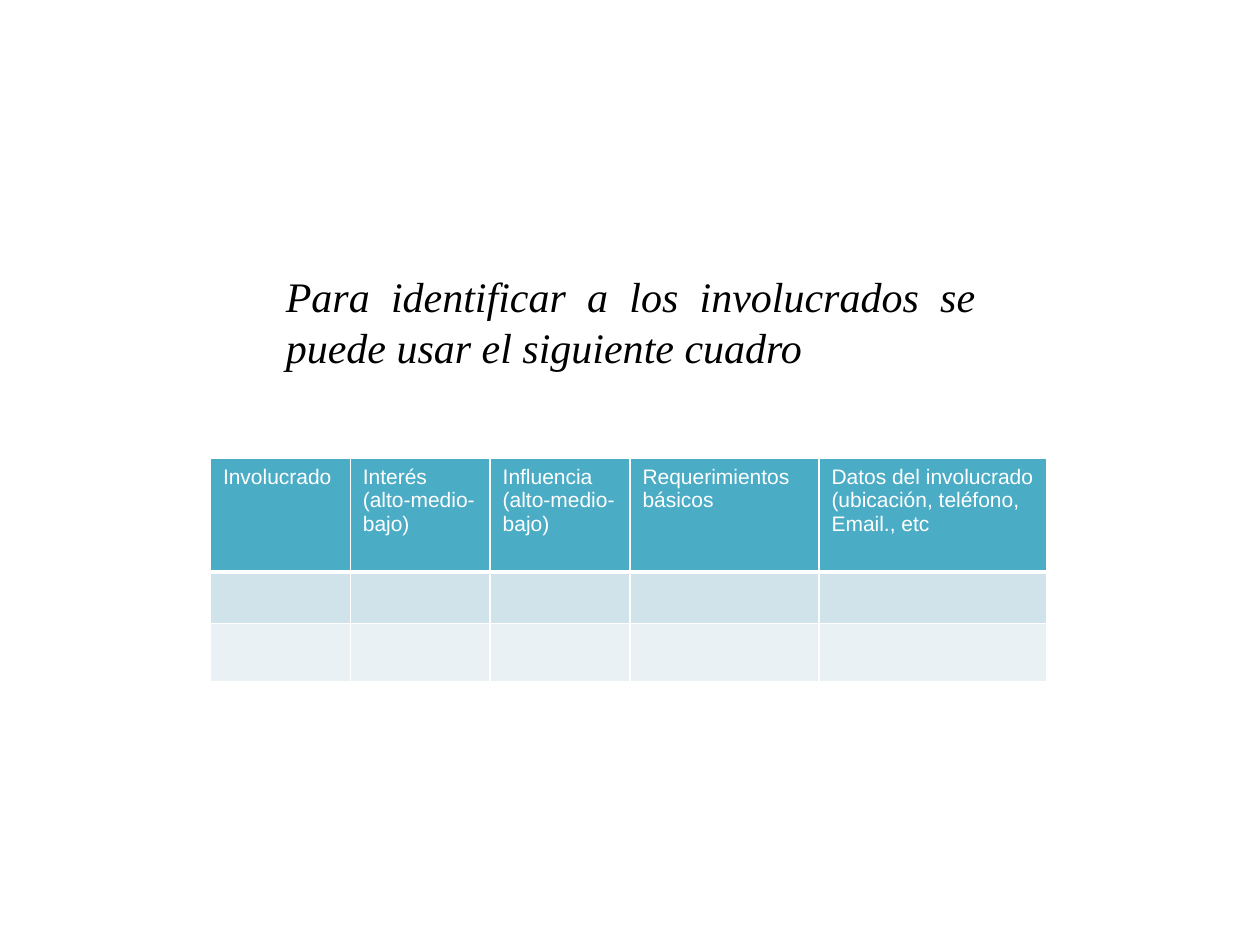
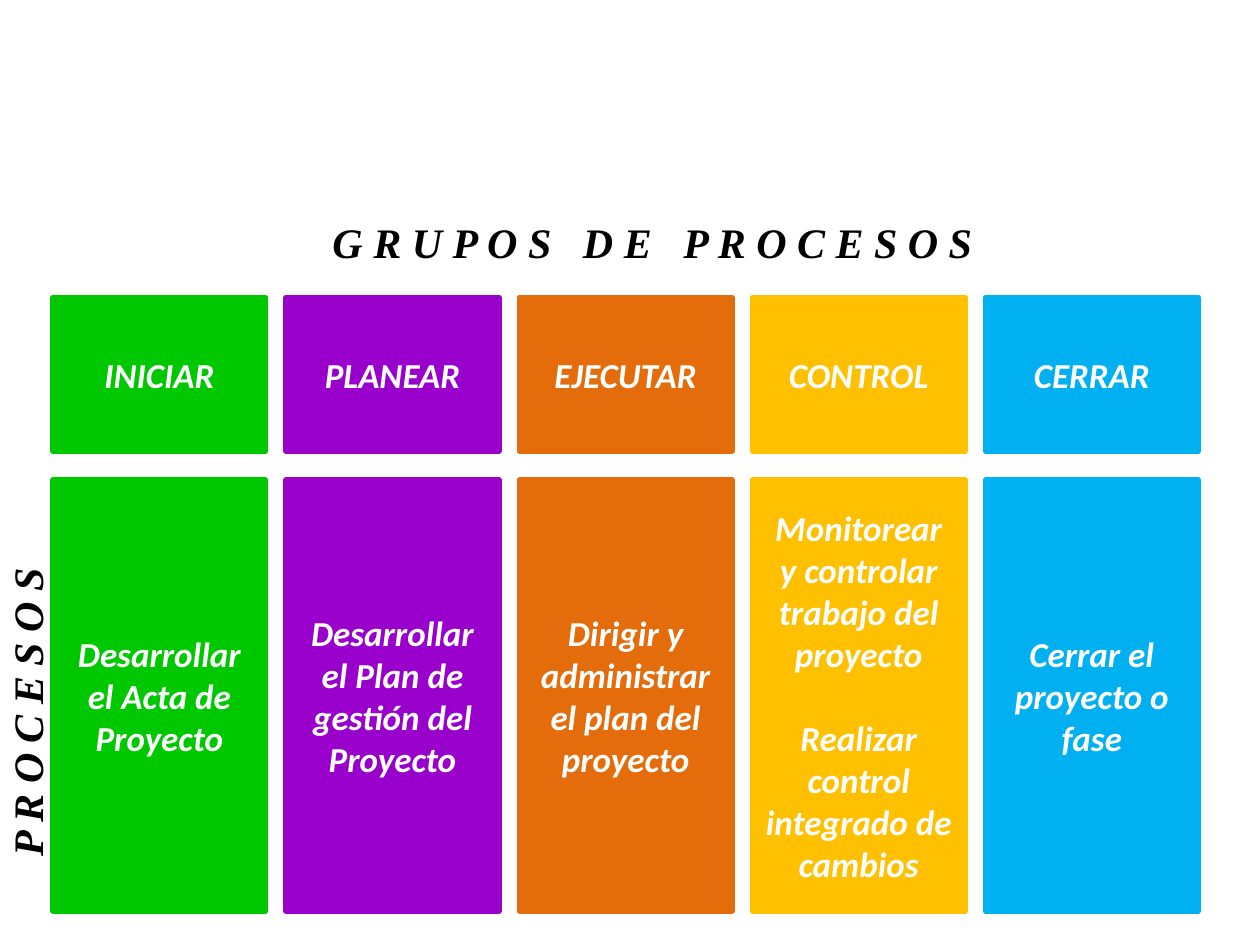
from dataclasses import dataclass
from itertools import accumulate
from typing import Any

from lxml.etree import SubElement
from pptx import Presentation
from pptx.dml.color import RGBColor
from pptx.enum.shapes import MSO_SHAPE
from pptx.enum.text import MSO_ANCHOR, PP_ALIGN
from pptx.oxml.ns import qn
from pptx.util import Emu, Inches, Pt


@dataclass(frozen=True)
class Theme:
    ink: str = "000000"
    paper: str = "FFFFFF"
    table_head: str = "4BACC6"
    table_bands: tuple[str, ...] = ("D0E3EA", "E9F1F5")
    serif: str = "Times New Roman"
    sans: str = "Arial"
    card_font: str = "Calibri"
    title_size: int = 24
    card_size: int = 20
    table_size: int = 12
    card_line: int = 3
    thin_rule: int = 1
    thick_rule: int = 3
    paragraph_gap: int = 24


@dataclass(frozen=True)
class Area:
    left: float
    top: float
    width: float
    height: float

    def emu(self) -> tuple[Emu, Emu, Emu, Emu]:
        return (across(self.left), down(self.top),
                across(self.width), down(self.height))


@dataclass(frozen=True)
class CardRow:
    top: float
    height: float


@dataclass(frozen=True)
class CardGrid:
    left: float
    pitch: float
    width: float

    def cell(self, column: int, row: CardRow) -> Area:
        return Area(self.left + column * self.pitch, row.top, self.width, row.height)


@dataclass(frozen=True)
class ProcessGroup:
    name: str
    colour: str
    processes: tuple[str, ...]


THEME = Theme()
SLIDE_WIDTH, SLIDE_HEIGHT = Inches(10), Inches(7.5)

TITLE = {"name": THEME.serif, "size": Pt(THEME.title_size), "italic": True}
HEADING = TITLE | {"bold": True}
CARD = {"name": THEME.card_font, "size": Pt(THEME.card_size), "bold": True, "italic": True}
TABLE_HEAD = {"name": THEME.sans, "size": Pt(THEME.table_size), "bold": False}

TABLE_AREA = Area(16.7, 48.53, 66.4, 23.6)
TABLE_COLUMNS = (11.1, 11.1, 11.1, 15, 18.1)
TABLE_ROWS = (12, 5.47, 6.13)
TABLE_LABELS = (
    ("Involucrado",),
    ("Interés", "(alto-medio-bajo)"),
    ("Influencia", "(alto-medio-bajo)"),
    ("Requerimientos básicos",),
    ("Datos del involucrado (ubicación, teléfono, Email., etc",),
)

CARDS = CardGrid(left=4.2, pitch=18.5, width=16.9)
NAME_ROW = CardRow(top=31.47, height=16.27)
PROCESS_ROW = CardRow(top=50.8, height=45.6)
GROUPS = (
    ProcessGroup("INICIAR", "00C800", ("Desarrollar el Acta de Proyecto",)),
    ProcessGroup("PLANEAR", "9900CC", ("Desarrollar el Plan de gestión del Proyecto",)),
    ProcessGroup("EJECUTAR", "E46C0A", ("Dirigir y administrar el plan del proyecto",)),
    ProcessGroup("CONTROL", "FFC000", ("Monitorear y controlar trabajo del proyecto",
                                       "Realizar control integrado de cambios")),
    ProcessGroup("CERRAR", "00B0F0", ("Cerrar el proyecto o fase",)),
)


def across(percent: float) -> Emu:
    return Emu(round(SLIDE_WIDTH * percent / 100))


def down(percent: float) -> Emu:
    return Emu(round(SLIDE_HEIGHT * percent / 100))


def format_font(font: Any, values: dict[str, Any], colour: str) -> None:
    for attribute, value in values.items():
        setattr(font, attribute, value)
    font.color.rgb = RGBColor.from_string(colour)


def write(frame: Any, lines: tuple[str, ...], values: dict[str, Any], colour: str,
          align: PP_ALIGN = PP_ALIGN.LEFT, gap: int = 0) -> None:
    for index, line in enumerate(lines):
        paragraph = frame.add_paragraph() if index else frame.paragraphs[0]
        paragraph.alignment = align
        if index and gap:
            paragraph.space_before = Pt(gap)
        run = paragraph.add_run()
        run.text = line
        format_font(run.font, values, colour)


def add_title(slide: Any, area: Area, text: str) -> None:
    frame = slide.shapes.add_textbox(*area.emu()).text_frame
    frame.word_wrap = True
    write(frame, (text,), TITLE, THEME.ink, PP_ALIGN.JUSTIFY)


def add_spaced_heading(slide: Any, area: Area, words: str, rotation: int = 0) -> None:
    box = slide.shapes.add_textbox(*area.emu())
    box.rotation = rotation
    box.text_frame.word_wrap = False
    paragraph = box.text_frame.paragraphs[0]
    for index, word in enumerate(words.split()):
        pieces = (" ", " ".join(word)) if index else (" ".join(word),)
        for piece in pieces:
            run = paragraph.add_run()
            run.text = piece
            format_font(run.font, HEADING, THEME.ink)
            if piece == " ":
                run.font._element.set("spc", str(THEME.title_size * 50))


def add_card(slide: Any, area: Area, lines: tuple[str, ...], colour: str) -> None:
    card = slide.shapes.add_shape(MSO_SHAPE.RECTANGLE, *area.emu())
    card.shadow.inherit = False
    card.fill.solid()
    card.line.fill.solid()
    for paint in (card.fill.fore_color, card.line.color):
        paint.rgb = RGBColor.from_string(colour)
    card.line.width = Pt(THEME.card_line)
    frame = card.text_frame
    frame.word_wrap = True
    frame.vertical_anchor = MSO_ANCHOR.MIDDLE
    write(frame, lines, CARD, THEME.paper, PP_ALIGN.CENTER, THEME.paragraph_gap)


def style_cell(cell: Any, fill: str, top: int, bottom: int) -> None:
    properties = cell._tc.get_or_add_tcPr()
    rules = {"lnL": THEME.thin_rule, "lnR": THEME.thin_rule, "lnT": top, "lnB": bottom}
    for side, width in rules.items():
        rule = SubElement(properties, qn(f"a:{side}"), w=str(Pt(width)))
        SubElement(SubElement(rule, qn("a:solidFill")), qn("a:srgbClr"), val=THEME.paper)
    cell.fill.solid()
    cell.fill.fore_color.rgb = RGBColor.from_string(fill)


def add_stakeholder_table(slide: Any) -> None:
    table = slide.shapes.add_table(
        len(TABLE_ROWS), len(TABLE_COLUMNS), *TABLE_AREA.emu()).table
    for column, width in zip(table.columns, TABLE_COLUMNS):
        column.width = across(width)
    fills = (THEME.table_head, *THEME.table_bands)
    rules = (THEME.thin_rule, THEME.thick_rule, THEME.thin_rule, THEME.thin_rule)
    for index, (row, height) in enumerate(zip(table.rows, TABLE_ROWS)):
        row.height = down(height)
        for cell in row.cells:
            style_cell(cell, fills[index], rules[index], rules[index + 1])
    for cell, lines in zip(table.rows[0].cells, TABLE_LABELS):
        write(cell.text_frame, lines, TABLE_HEAD, THEME.paper)


def build_stakeholders(slide: Any) -> None:
    add_stakeholder_table(slide)
    add_title(slide, Area(21.7, 28, 56.7, 12.13),
              "Para identificar a los involucrados se puede usar el siguiente cuadro")


def build_process_groups(slide: Any) -> None:
    for column, group in enumerate(GROUPS):
        add_card(slide, CARDS.cell(column, PROCESS_ROW), group.processes, group.colour)
        add_card(slide, CARDS.cell(column, NAME_ROW), (group.name,), group.colour)
    add_spaced_heading(slide, Area(25.4, 22.27, 54.5, 6.8), "GRUPOS DE PROCESOS")
    add_spaced_heading(slide, Area(-10.8, 71.33, 25.9, 6.8), "PROCESOS", rotation=270)


def main() -> None:
    deck = Presentation()
    deck.slide_width, deck.slide_height = SLIDE_WIDTH, SLIDE_HEIGHT
    for build in (build_stakeholders, build_process_groups):
        slide = deck.slides.add_slide(deck.slide_layouts[6])
        slide.background.fill.solid()
        slide.background.fill.fore_color.rgb = RGBColor.from_string(THEME.paper)
        build(slide)
    deck.save("out.pptx")


if __name__ == "__main__":
    main()
